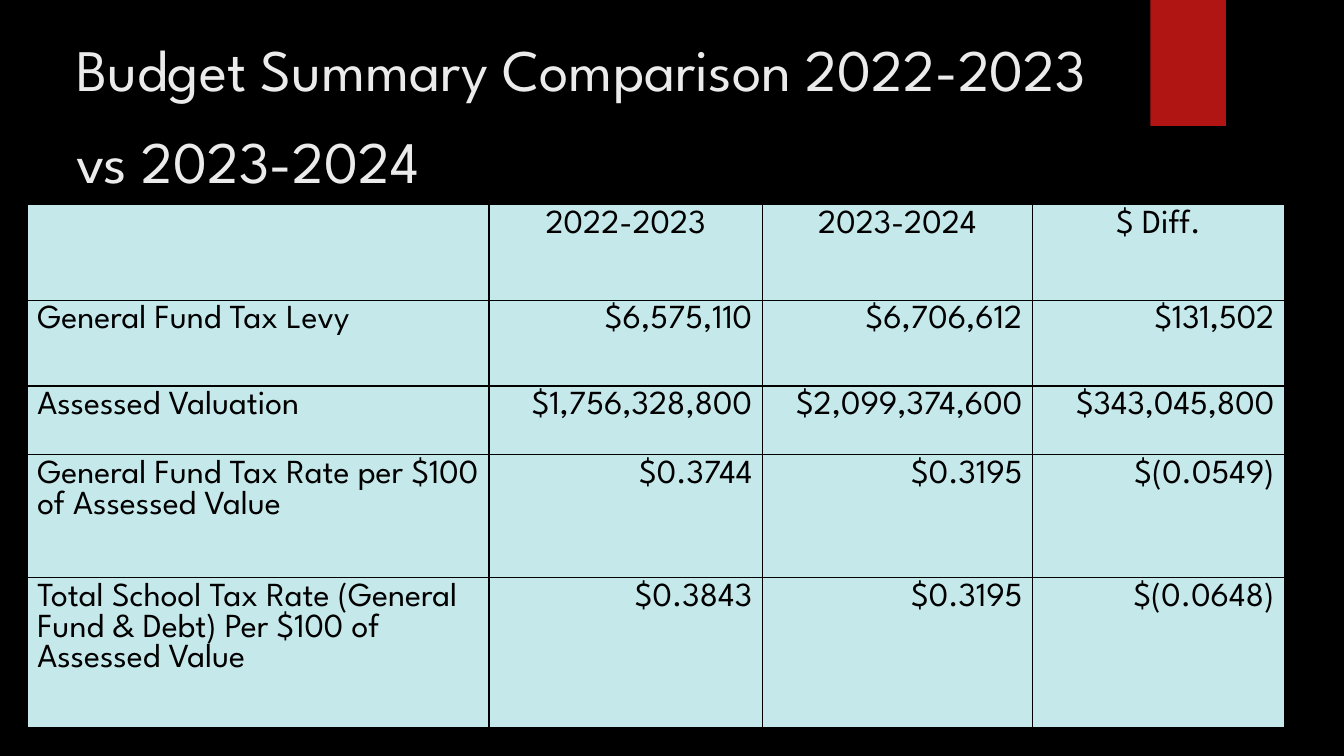
from pptx import Presentation
from pptx.dml.color import RGBColor
from pptx.enum.shapes import MSO_SHAPE
from pptx.enum.text import MSO_ANCHOR, PP_ALIGN
from pptx.oxml import parse_xml
from pptx.oxml.ns import nsdecls
from pptx.util import Inches, Pt

RECT = MSO_SHAPE.RECTANGLE
MIDDLE = MSO_ANCHOR.MIDDLE
LEFT, CENTER, RIGHT = PP_ALIGN.LEFT, PP_ALIGN.CENTER, PP_ALIGN.RIGHT

FONT = "League Spartan"
COLORS = {
    "background": "000000",
    "ribbon": "B01513",
    "title": "EBEBEB",
    "cell": "C5E8EA",
    "ink": "000000",
}

COL_WIDTHS = [4.58, 2.71, 2.68, 2.5]
ROW_HEIGHTS = [0.95, 0.85, 0.68, 1.22, 1.49]
BUDGET = [
    ["", "2022-2023", "2023-2024", "$ Diff."],
    ["General Fund Tax Levy", "$6,575,110", "$6,706,612", "$131,502"],
    ["Assessed Valuation", "$1,756,328,800", "$2,099,374,600", "$343,045,800"],
    ["General Fund Tax Rate per $100 of Assessed Value",
     "$0.3744", "$0.3195", "$(0.0549)"],
    ["Total School Tax Rate (General Fund & Debt) Per $100 of Assessed Value",
     "$0.3843", "$0.3195", "$(0.0648)"],
]


def rgb(name):
    return RGBColor.from_string(COLORS[name])


def format_text(p, size, color):
    p.font.size = Pt(size)
    for r in p.runs:
        r.font.name = FONT
        r.font.size = Pt(size)
        r.font.color.rgb = rgb(color)


def add_ribbon(s, x, y, w, h):
    sp = s.shapes.add_shape(RECT, Inches(x), Inches(y), Inches(w), Inches(h))
    sp.shadow.inherit = False
    sp.fill.solid()
    sp.fill.fore_color.rgb = rgb("ribbon")
    sp.line.fill.background()


def add_title(s, text, x, y, w, h):
    sp = s.shapes.add_textbox(Inches(x), Inches(y), Inches(w), Inches(h))
    tf = sp.text_frame
    tf.word_wrap = True
    tf.vertical_anchor = MIDDLE
    tf.text = text
    p = tf.paragraphs[0]
    p.line_spacing = 1.3
    format_text(p, 42, "title")


def set_borders(cell):
    tc_pr = cell._tc.get_or_add_tcPr()
    for i, side in enumerate(("lnL", "lnR", "lnT", "lnB")):
        tc_pr.insert(i, parse_xml(
            f'<a:{side} {nsdecls("a")} w="12700"><a:solidFill>'
            f'<a:srgbClr val="{COLORS["ink"]}"/></a:solidFill></a:{side}>'))


def add_budget_table(s, x, y):
    table = s.shapes.add_table(
        len(BUDGET), len(COL_WIDTHS), Inches(x), Inches(y),
        Inches(sum(COL_WIDTHS)), Inches(sum(ROW_HEIGHTS))).table
    table.first_row = table.horz_banding = False
    for column, width in zip(table.columns, COL_WIDTHS):
        column.width = Inches(width)
    for row, height in zip(table.rows, ROW_HEIGHTS):
        row.height = Inches(height)

    for i, values in enumerate(BUDGET):
        for j, value in enumerate(values):
            cell = table.cell(i, j)
            cell.fill.solid()
            cell.fill.fore_color.rgb = rgb("cell")
            set_borders(cell)
            cell.text = value
            p = cell.text_frame.paragraphs[0]
            # Centred header, labels to the left, amounts to the right
            p.alignment = CENTER if i == 0 else LEFT if j == 0 else RIGHT
            format_text(p, 24, "ink")


def main():
    prs = Presentation()
    prs.slide_width, prs.slide_height = Inches(13.33), Inches(7.5)
    s = prs.slides.add_slide(prs.slide_layouts[6])

    # Background and ribbon
    s.background.fill.solid()
    s.background.fill.fore_color.rgb = rgb("background")
    add_ribbon(s, 11.41, 0, 0.75, 1.25)

    # Title and budget table
    add_title(s, "Budget Summary Comparison 2022-2023 vs 2023-2024",
              0.66, 0.26, 10.29, 1.53)
    add_budget_table(s, 0.27, 2.03)

    prs.save("out.pptx")


if __name__ == "__main__":
    main()
